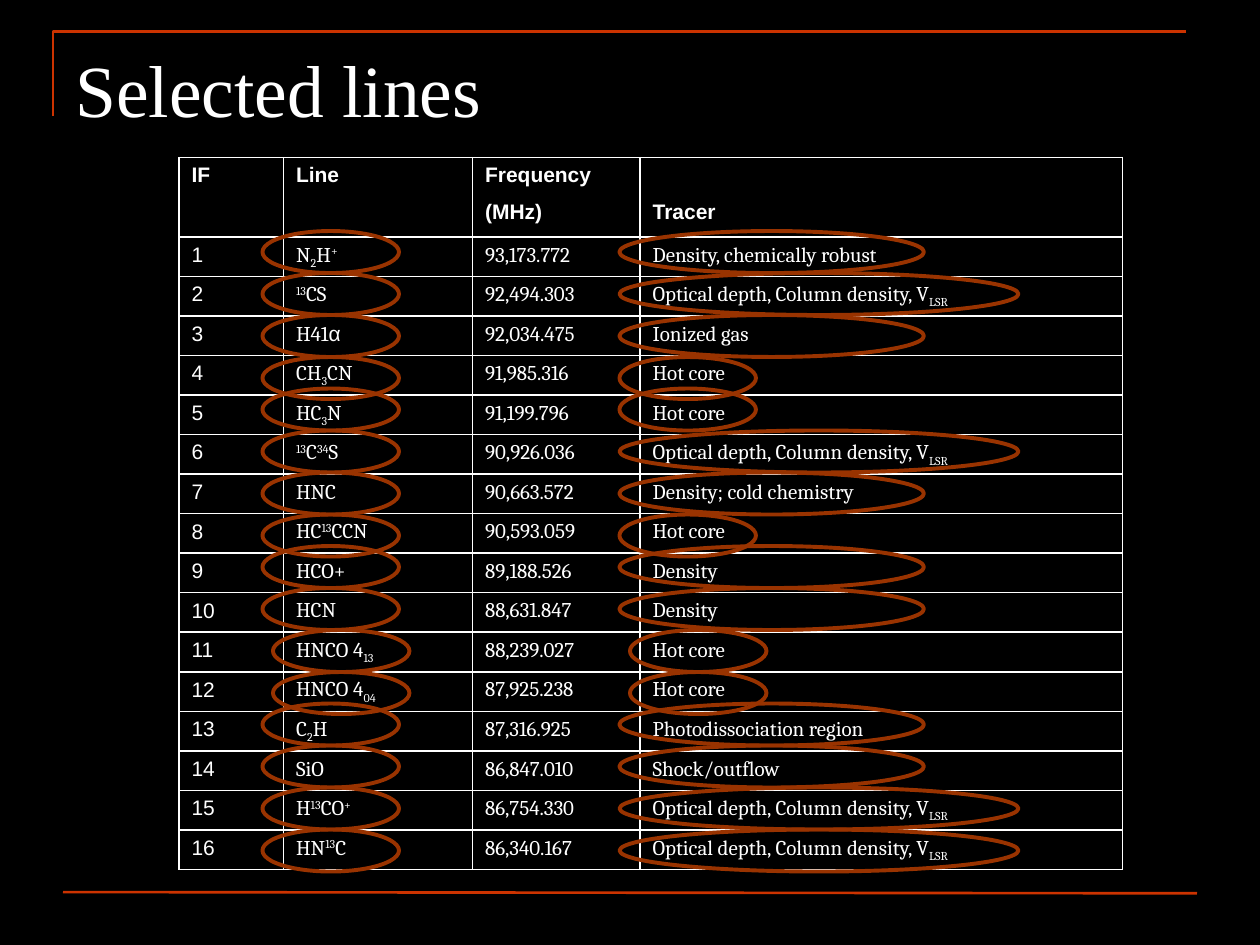
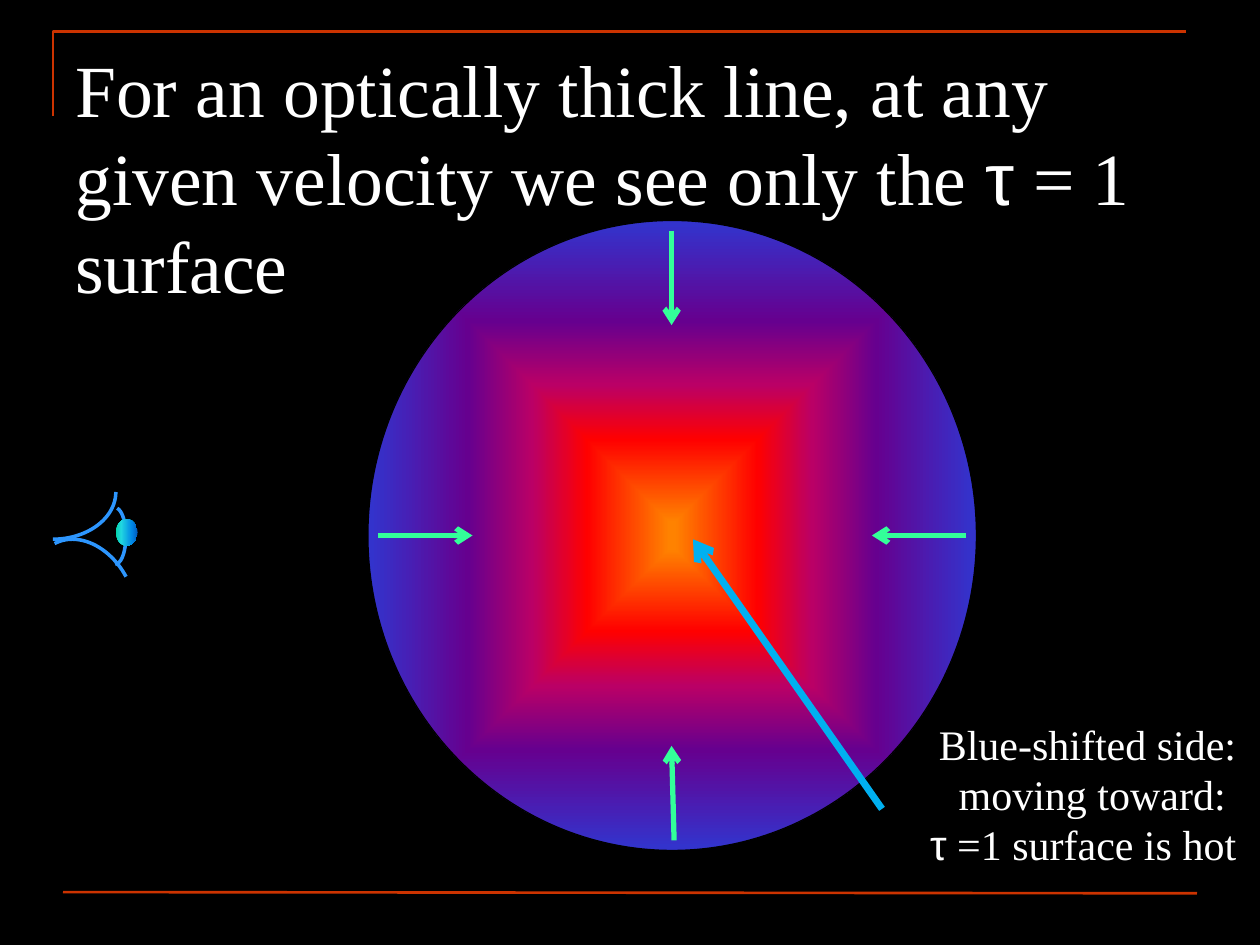
from lxml.etree import SubElement
from pptx import Presentation
from pptx.dml.color import RGBColor
from pptx.enum.shapes import MSO_CONNECTOR, MSO_SHAPE
from pptx.enum.text import PP_ALIGN
from pptx.oxml import parse_xml
from pptx.oxml.ns import nsdecls, qn
from pptx.util import Inches, Pt

WHITE, BLACK, RULE, RING = "FFFFFF", "000000", "CC3300", "993300"
INFLOW, POINTER, EYE = "33FF99", "00B0F0", "2D96FE"
SERIF, SANS, BODY = "Times New Roman", "Arial", "Cambria"

# Runs are split by "|"; a leading "_" lowers a run, "^" raises it.
DEPTH = "Optical depth, Column density, V|_LSR"
HEADER = ("IF", "Line", "Frequency \n(MHz)", "Tracer")
LINES = [
    ("N|_2|H|^+", "93,173.772", "Density, chemically robust"),
    ("^13|CS", "92,494.303", DEPTH),
    ("H41|α", "92,034.475", "Ionized gas"),
    ("CH|_3|CN", "91,985.316", "Hot core"),
    ("HC|_3|N", "91,199.796", "Hot core"),
    ("^13|C|^34|S", "90,926.036", DEPTH),
    ("HNC", "90,663.572", "Density; cold chemistry"),
    ("HC|^13|CCN", "90,593.059", "Hot core"),
    ("HCO+", "89,188.526", "Density"),
    ("HCN", "88,631.847", "Density"),
    ("HNCO 4|_13", "88,239.027", "Hot core"),
    ("HNCO 4|_04", "87,925.238", "Hot core"),
    ("C|_2|H", "87,316.925", "Photodissociation region"),
    ("SiO", "86,847.010", "Shock/outflow "),
    ("H|^13|CO|^+", "86,754.330", DEPTH),
    ("HN|^13|C", "86,340.167", DEPTH),
]
COL_WIDTHS = (0.83, 1.5, 1.33, 3.83)
TABLE_LEFT, TABLE_TOP, HEADER_H = 1.42, 1.25, 0.63
ROW_H = (6.59 - TABLE_TOP - HEADER_H) / 15
CELL_BOTTOM = 0.02  # small enough that no row outgrows ROW_H

# Rings lie on a grid of twelfths of an inch.
GRID = 1 / 12
RING_H, LINE_RING_W = 4, 13
TRACER_RING_W = {"Hot core": 13, DEPTH: 38}
OTHER_RING_W = 29

CLOUD = (2.92, 1.75, 4.83, 5)
CLOUD_STOPS = [(1, "FF8200"), (28, "FF0000"), (46, "BA0066"), (67, "66008F"), (99, "3333CC")]
PUPIL_STOPS = [(0, "03D4A8"), (25, "21D6E0"), (75, "0087E6"), (100, "005CBF")]
INFLOWS = [(3, 4.25, 3.75, 4.25), (7.67, 4.25, 6.92, 4.25),
           (5.33, 1.83, 5.33, 2.58), (5.35, 6.67, 5.33, 5.92)]
EYE_ARCS = [((-0.08, 3.53, 1, 0.75), 0, (162, 0)),
            ((0.17, 4.38, 1, 0.75), 241.7, (162, 0)),
            ((0.83, 4.03, 0.17, 0.45), 0, (162, 51.55))]


def color(hex_text):
    return RGBColor.from_string(hex_text)


def inches(values):
    return [Inches(v) for v in values]


def set_line(sp, hex_text, width):
    sp.line.color.rgb = color(hex_text)
    sp.line.width = Pt(width)


def add_runs(p, text, size, font, bold=False):
    """Write marked-up text; Greek letters go in the sans font."""
    for part in text.split("|"):
        r = p.add_run()
        r.text = part.lstrip("_^")
        greek = part in ("α", "τ")
        look = {"size": Pt(size), "name": SANS if greek else font, "bold": bold}
        for key, value in look.items():
            setattr(r.font, key, value)
        r.font.color.rgb = color(WHITE)
        shift = {"_": "-25000", "^": "30000"}.get(part[0])
        if shift:
            r.font._element.set("baseline", shift)


def add_text(s, box, paragraphs, size, align=PP_ALIGN.LEFT):
    tf = s.shapes.add_textbox(*inches(box)).text_frame
    tf.word_wrap = True
    for i, text in enumerate(paragraphs):
        p = tf.add_paragraph() if i else tf.paragraphs[0]
        p.alignment = align
        add_runs(p, text, size, SERIF)


def add_line(shapes, ends, hex_text, width, arrow=False):
    sp = shapes.add_connector(MSO_CONNECTOR.STRAIGHT, *inches(ends))
    set_line(sp, hex_text, width)
    if arrow:
        SubElement(sp.line._get_or_add_ln(), qn("a:tailEnd"), type="arrow")
    SubElement(sp._element.spPr, qn("a:effectLst"))


def add_preset(shapes, kind, box, line=None):
    """Add an unfilled shape; line is (colour, points) or None."""
    sp = shapes.add_shape(kind, *inches(box))
    sp.shadow.inherit = False
    sp.fill.background()
    if line:
        set_line(sp, *line)
    else:
        sp.line.fill.background()
    return sp


def set_gradient(sp, stops, direction):
    stop_xml = "".join(f'<a:gs pos="{pos * 1000}"><a:srgbClr val="{c}"/></a:gs>' for pos, c in stops)
    grad = parse_xml(f'<a:gradFill {nsdecls("a")} rotWithShape="1">'
                     f"<a:gsLst>{stop_xml}</a:gsLst>{direction}</a:gradFill>")
    plain = sp._element.spPr.find(qn("a:noFill"))
    plain.getparent().replace(plain, grad)


def add_slide(prs, title, title_w):
    """Start a slide with the shared background, rules and title."""
    s = prs.slides.add_slide(prs.slide_layouts[6])
    s.background.fill.solid()
    s.background.fill.fore_color.rgb = color(BLACK)
    corner = s.shapes.build_freeform(*inches((0.42, 0.92)), scale=1)
    corner.add_line_segments([inches((0.42, 0.25)), inches((9.41, 0.25))], close=False)
    sp = corner.convert_to_shape()
    sp.shadow.inherit = False
    sp.fill.background()
    set_line(sp, RULE, 1.5)
    add_line(s.shapes, (0.5, 7.08, 9.5, 7.09), RULE, 1.5)
    add_text(s, (0.5, 0.3, title_w, 1.24), [title], 42)
    return s


def set_borders(cell):
    tc_pr = cell._tc.get_or_add_tcPr()
    for i, side in enumerate("LRTB"):
        tc_pr.insert(i, parse_xml(
            f'<a:ln{side} {nsdecls("a")} w="12700"><a:solidFill>'
            f'<a:srgbClr val="{WHITE}"/></a:solidFill></a:ln{side}>'))


def add_lines_table(s):
    rows = [HEADER] + [(str(n), *line) for n, line in enumerate(LINES, 1)]
    box = (TABLE_LEFT, TABLE_TOP, sum(COL_WIDTHS), HEADER_H + ROW_H * len(LINES))
    table = s.shapes.add_table(len(rows), len(HEADER), *inches(box)).table
    table.first_row = table.horz_banding = False
    for col, width in zip(table.columns, COL_WIDTHS):
        col.width = Inches(width)
    for i, row in enumerate(rows):
        table.rows[i].height = Inches(ROW_H if i else HEADER_H)
        for j, text in enumerate(row):
            cell = table.cell(i, j)
            cell.fill.background()
            cell.margin_bottom = Inches(CELL_BOTTOM)
            set_borders(cell)
            tf = cell.text_frame
            for k, part in enumerate(text.split("\n")):
                p = tf.add_paragraph() if k else tf.paragraphs[0]
                p.alignment = PP_ALIGN.JUSTIFY if j else PP_ALIGN.LEFT
                p.space_before = Pt(7.4)
                add_runs(p, part, 12, BODY if i and j else SANS, bold=i == 0)
    table.cell(0, 3).margin_top = Inches(0.34)


def add_rings(s):
    """Circle each line and its tracer, in blocks of four rows."""
    for i, (name, _, tracer) in enumerate(LINES):
        top = 22 + 15 * (i // 4) + 4 * (i % 4)
        shift = 1 if name.startswith("HNCO") else 0
        for left, width in ((25, LINE_RING_W), (59, TRACER_RING_W.get(tracer, OTHER_RING_W))):
            box = [v * GRID for v in (left + shift, top, width, RING_H)]
            add_preset(s.shapes, MSO_SHAPE.OVAL, box, (RING, 2.25))


def add_cloud(s):
    group = s.shapes.add_group_shape().shapes
    sp = add_preset(group, MSO_SHAPE.OVAL, CLOUD, (BLACK, 0.75))
    set_gradient(sp, CLOUD_STOPS, '<a:path path="shape"><a:fillToRect l="50000" t="50000" '
                                  'r="50000" b="50000"/></a:path>')
    for ends in INFLOWS:
        add_line(group, ends, INFLOW, 3, arrow=True)


def add_eye(s):
    group = s.shapes.add_group_shape().shapes
    for box, rotation, angles in EYE_ARCS:
        sp = add_preset(group, MSO_SHAPE.ARC, box, (EYE, 2))
        sp.rotation = rotation
        sp._element.spPr.xfrm.set("flipV", "1")
        for i, angle in enumerate(angles):
            sp.adjustments[i] = angle
    pupil = add_preset(group, MSO_SHAPE.OVAL, (0.92, 4.12, 0.17, 0.21))
    set_gradient(pupil, PUPIL_STOPS, '<a:lin ang="0" scaled="1"/>')


def main():
    prs = Presentation()
    prs.slide_width, prs.slide_height = inches((10, 7.5))

    s = add_slide(prs, "Selected lines", 7.24)
    add_lines_table(s)
    add_rings(s)

    s = add_slide(prs, "For an optically thick line, at any given velocity "
                       "we see only the |τ| = 1 surface", 9)
    add_cloud(s)
    add_text(s, (7, 5.65, 2.91, 1.31),
             ["Blue-shifted side: moving toward: ", "τ| =1 surface is hot"], 24, PP_ALIGN.RIGHT)
    add_line(s.shapes, (7, 6.42, 5.5, 4.28), POINTER, 4, arrow=True)
    add_eye(s)
    prs.save("out.pptx")


if __name__ == "__main__":
    main()
